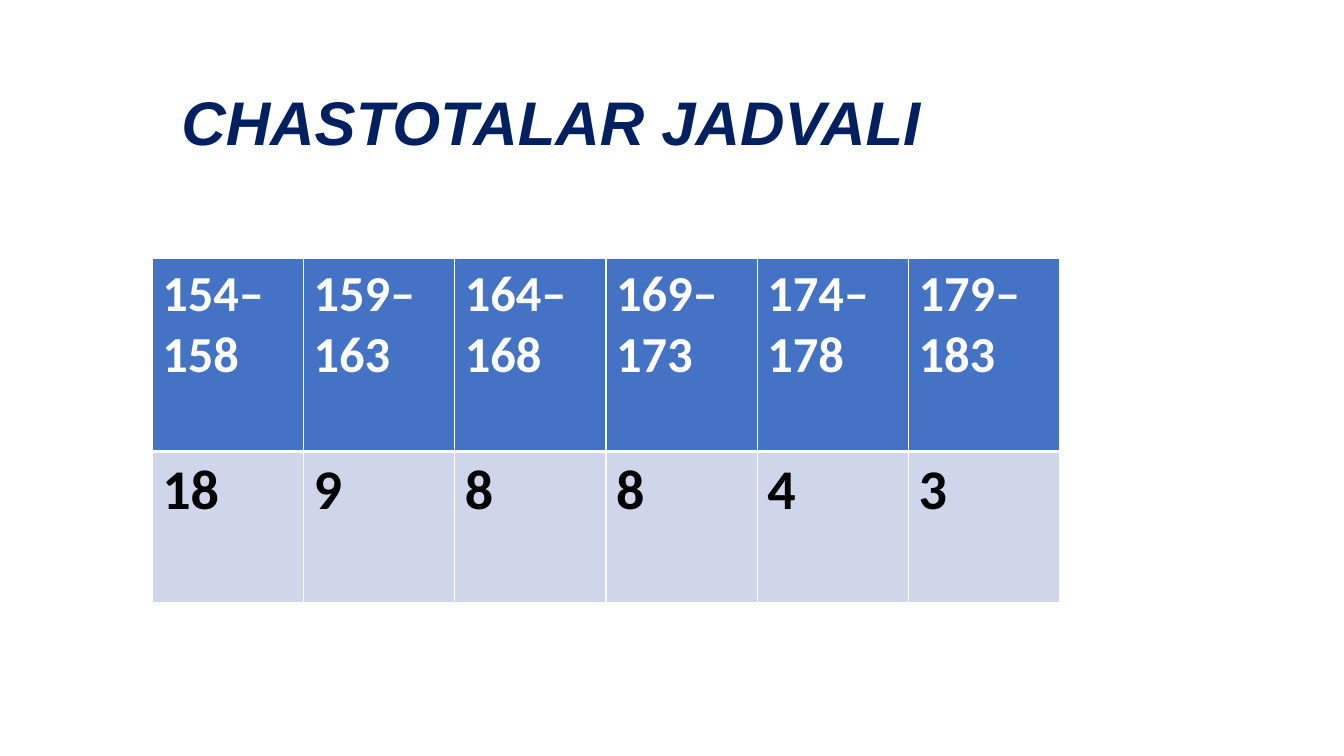
from lxml.etree import SubElement as Sub
from pptx import Presentation
from pptx.dml.color import RGBColor
from pptx.enum.text import MSO_ANCHOR as Anchor
from pptx.oxml.ns import qn
from pptx.util import Inches, Pt

# Content
TITLE = "CHASTOTALAR JADVALI"
COUNTS = [
    ("154–158", 18), ("159–163", 9), ("164–168", 8),
    ("169–173", 8), ("174–178", 4), ("179–183", 3),
]
# Row looks: height, text size, text colour, fill, top and bottom line width
ROWS = [
    (1.92, 36, "FFFFFF", "4472C4", 1, 3),
    (1.5, 40, "000000", "CFD5EA", 3, 1),
]
LEFT, TOP, COL = 1.51, 2.56, 1.5


def color(code):
    return RGBColor.from_string(code)


def add_run(para, text, font, size, code, slant=False):
    run = para.add_run()
    run.text = text
    run.font.name, run.font.size = font, Pt(size)
    run.font.bold, run.font.italic = True, slant
    run.font.color.rgb = color(code)


def add_edge(cell, side, width):
    line = Sub(cell._tc.get_or_add_tcPr(), qn("a:ln" + side), w=str(Pt(width)))
    fill = Sub(line, qn("a:solidFill"))
    Sub(fill, qn("a:srgbClr"), val="FFFFFF")


deck = Presentation()
deck.slide_width, deck.slide_height = Inches(13.33), Inches(7.5)
slide = deck.slides.add_slide(deck.slide_layouts[6])

# Title
box = slide.shapes.add_textbox(Inches(1.7), Inches(0.62), Inches(9), Inches(1.25))
frame = box.text_frame
frame.word_wrap = True
frame.vertical_anchor = Anchor.MIDDLE
para = frame.paragraphs[0]
para.line_spacing = 0.9
add_run(para, TITLE, "Arial", 44, "002060", slant=True)

# Frequency table: ranges above, counts below
high = sum(row[0] for row in ROWS)
table = slide.shapes.add_table(
    len(ROWS), len(COUNTS), Inches(LEFT), Inches(TOP),
    Inches(COL * len(COUNTS)), Inches(high)).table
for col in table.columns:
    col.width = Inches(COL)
for r, (tall, size, ink, fill, top, base) in enumerate(ROWS):
    table.rows[r].height = Inches(tall)
    for c, pair in enumerate(COUNTS):
        cell = table.cell(r, c)
        for side, width in (("L", 1), ("R", 1), ("T", top), ("B", base)):
            add_edge(cell, side, width)
        cell.fill.solid()
        cell.fill.fore_color.rgb = color(fill)
        add_run(cell.text_frame.paragraphs[0], str(pair[r]), "Calibri", size, ink)

deck.save("out.pptx")
